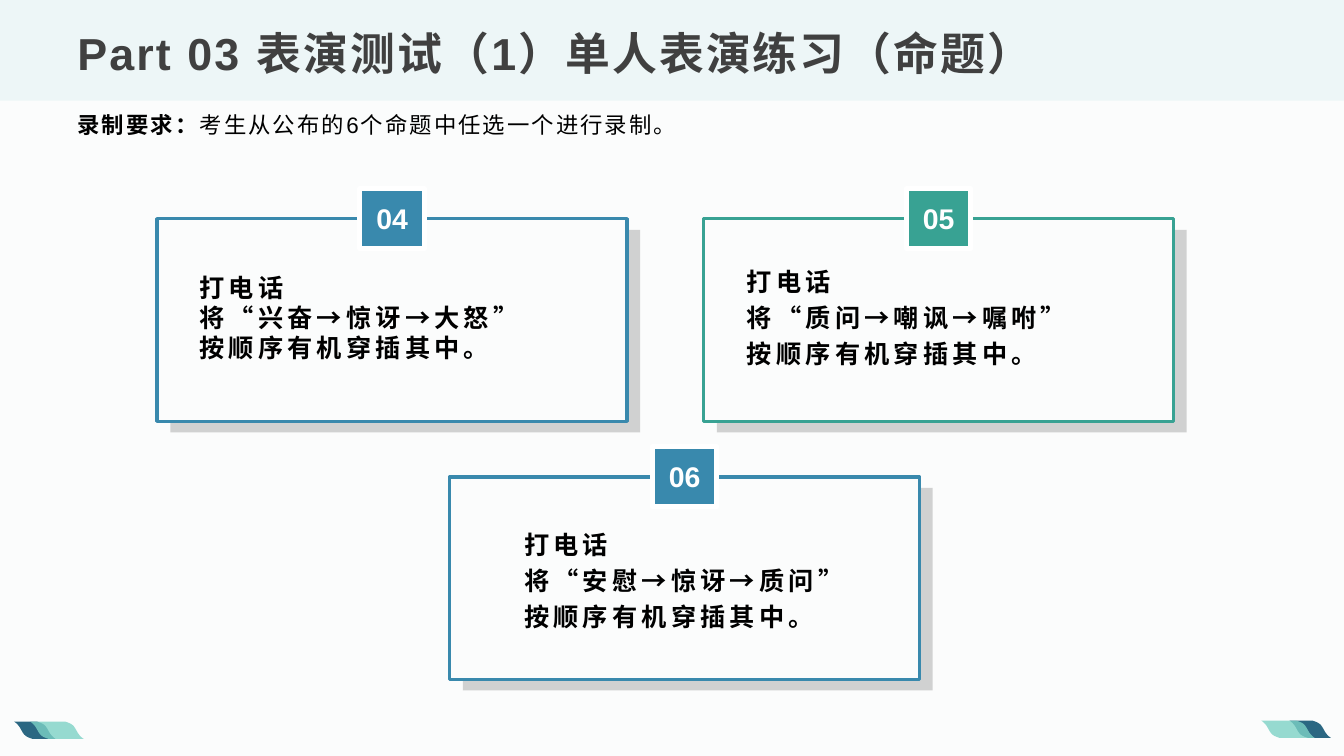
import pptx
import pptx.util
import pptx.dml.color
import pptx.enum.shapes
import pptx.enum.text
import pptx.oxml
import pptx.oxml.ns

UNIT = 9144
WIDE, HIGH = 1333, 750
FONT = "Arial"
HUES = {
    "page": "FBFCFC", "band": "EDF6F7", "title": "404040", "text": "000000",
    "white": "FFFFFF", "blue": "3989AD", "green": "38A293", "shade": "BFBFBF",
    "navy": "2B6782", "mint": "7DD2C6",
}
ANCHOR = pptx.enum.text.MSO_ANCHOR
ALIGN = pptx.enum.text.PP_ALIGN
BULGE = [((0, 0), (0, 0), (4, 2), (7, 8)), ((7, 8), (10, 14), (12, 15), (18, 17))]
LEAF_H = 17
STEPS = 6

CARDS = [
    {"at": (156, 217), "hue": "blue", "num": "04", "body": (32, 45, 400, 98),
     "low": True, "space": 1.0,
     "lines": ["打电话", "将“兴奋→惊讶→大怒”", "按顺序有机穿插其中。"]},
    {"at": (698, 217), "hue": "green", "num": "05", "body": (33, 51, 400, 98),
     "low": True, "space": 1.2,
     "lines": ["打电话", "将“质问→嘲讽→嘱咐”", "按顺序有机穿插其中。"]},
    {"at": (446, 473), "hue": "blue", "num": "06", "body": (64, 41, 365, 119),
     "low": False, "space": 1.2,
     "lines": ["打电话", "将“安慰→惊讶→质问”", "按顺序有机穿插其中。"]},
]


def px(num):
    return pptx.util.Emu(round(num * UNIT))


def tint(hue):
    return pptx.dml.color.RGBColor.from_string(HUES[hue])


def paint(shape, hue, alpha=100, edge=None, width=0):
    shape.shadow.inherit = False
    shape.fill.solid()
    shape.fill.fore_color.rgb = tint(hue)
    if alpha < 100:
        tone = shape.fill._xPr.find(".//" + pptx.oxml.ns.qn("a:srgbClr"))
        veil = pptx.oxml.parse_xml(
            f'<a:alpha {pptx.oxml.ns.nsdecls("a")} val="{alpha * 1000}"/>')
        tone.append(veil)
    if edge:
        shape.line.color.rgb = tint(edge)
        shape.line.width = pptx.util.Pt(width)
    else:
        shape.line.fill.background()


def block(slide, box, hue, **look):
    kind = pptx.enum.shapes.MSO_SHAPE.RECTANGLE
    shape = slide.shapes.add_shape(kind, *map(px, box))
    paint(shape, hue, **look)
    return shape


def write(para, text, size, hue, bold=True, gap=0):
    run = para.add_run()
    run.text = text
    run.font.name = FONT
    run.font.size = pptx.util.Pt(size)
    run.font.bold = bold
    run.font.color.rgb = tint(hue)
    if gap:
        run._r.get_or_add_rPr().set("spc", str(round(gap * 100)))


def label(slide, box, rows, size, hue, space, gap, low=False, foot=5):
    frame = slide.shapes.add_textbox(*map(px, box)).text_frame
    frame.word_wrap = True
    frame.vertical_anchor = ANCHOR.BOTTOM if low else ANCHOR.TOP
    frame.margin_bottom = px(foot)
    for i, row in enumerate(rows):
        para = frame.paragraphs[0] if i == 0 else frame.add_paragraph()
        para.line_spacing = space
        for text, bold in row:
            write(para, text, size, hue, bold, gap)


def curve(a, b, c, d):
    for i in range(STEPS + 1):
        t = i / STEPS
        u = 1 - t
        yield tuple(u**3 * p + 3 * u * u * t * q + 3 * u * t * t * r + t**3 * s
                    for p, q, r, s in zip(a, b, c, d))


def leaf(slide, left, top, width, hue, alpha=100):
    side = [dot for part in BULGE for dot in curve(*part)]
    dots = side + [(width - x, LEAF_H - y) for x, y in side]
    dots = [(px(left + x), px(top + y)) for x, y in dots]
    build = slide.shapes.build_freeform(*dots[0], scale=1.0)
    build.add_line_segments(dots[1:], close=True)
    paint(build.convert_to_shape(), hue, alpha)


def leaves(slide, left, top, dark, light):
    leaf(slide, left + dark, top, 41, "navy")
    leaf(slide, left + light, top, 53, "mint", 80)


def header(slide, left, top, width, height):
    block(slide, (left, top, width, height), "band")
    label(slide, (left + 67, top + 17, 1200, 67),
          [[("Part 03 表演测试（1）单人表演练习（命题）", True)]],
          32, "title", 0.9, 1.5, low=True)


def demand(slide, box):
    row = [("录制要求：", True), ("考生从公布的6个命题中任选一个进行录制。", False)]
    label(slide, box, [row], 16, "text", 1.2, 1.5)


def card(slide, box, data):
    left, top, width, height = box
    hue = data["hue"]
    block(slide, (left + 13, top + 11, width, height), "shade", alpha=70)
    block(slide, box, "page", edge=hue, width=2.5)
    badge = block(slide, (left + (width - 64) / 2, top - 30, 64, 60), hue,
                  edge="white", width=3.5)
    frame = badge.text_frame
    frame.vertical_anchor = ANCHOR.TOP
    frame.margin_top = px(6)
    frame.margin_left = frame.margin_right = 0
    para = frame.paragraphs[0]
    para.alignment = ALIGN.CENTER
    para.line_spacing = 1.2
    write(para, data["num"], 20.3, "white")
    x, y, w, h = data["body"]
    label(slide, (left + x, top + y, w, h), [[(line, True)] for line in data["lines"]],
          18, "text", data["space"], 3, data["low"], 0 if data["low"] else 5)


def main():
    deck = pptx.Presentation()
    deck.slide_width, deck.slide_height = px(WIDE), px(HIGH)
    slide = deck.slides.add_slide(deck.slide_layouts[6])
    slide.background.fill.solid()
    slide.background.fill.fore_color.rgb = tint("page")
    header(slide, 0, 0, WIDE, 100)
    demand(slide, (67, 100, 1193, 42))
    leaves(slide, 14, 716, 0, 16)
    leaves(slide, 1251, 715, 28, 0)
    for data in CARDS:
        card(slide, (*data["at"], 466, 201), data)
    deck.save("out.pptx")


if __name__ == "__main__":
    main()
